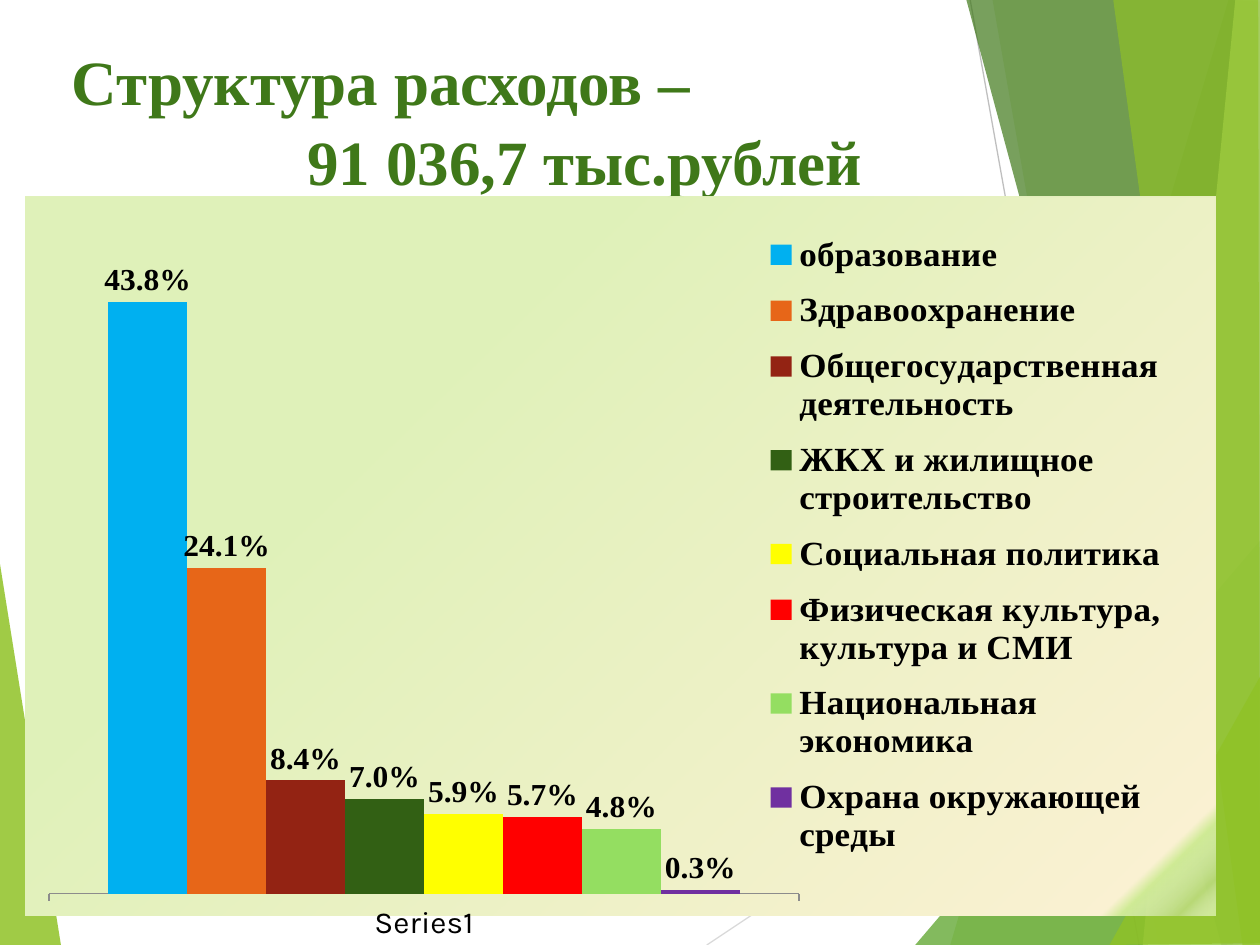
import dataclasses

import pptx
import pptx.chart.data
import pptx.dml.color
import pptx.enum.chart
import pptx.enum.shapes
import pptx.enum.text
import pptx.oxml
import pptx.oxml.ns
import pptx.util

Pt = pptx.util.Pt
TITLE_FONT = "Times New Roman"
AXIS_FONT = "Karla"
COLORS = {
    "lime": "90C226", "green": "54A021", "forest": "3F7819", "pale": "C0E474",
    "light_line": "D9D9D9", "line": "BFBFBF", "axis": "8C8C8C", "text": "000000",
    "education": "00B0F0", "health": "E76618", "state": "932313", "housing": "326014",
    "social": "FFFF00", "culture": "FF0000", "economy": "94DE61", "environment": "7030A0",
    "mint": "DFF1B9", "cream": "FAF1D2", "fold": "D0EB96", "glint": "FFFFFF",
}


@dataclasses.dataclass
class Facet:
    color: str
    opacity: int
    points: list[tuple[float, float]]


@dataclasses.dataclass
class Ray:
    color: str
    start: tuple[float, float]
    end: tuple[float, float]


@dataclasses.dataclass
class Expense:
    name: str
    share: float
    color: str


@dataclasses.dataclass
class GradientStop:
    position: int
    color: str
    opacity: int = 100


BACKDROP = [
    Facet("lime", 85, [(-0.7, 316.1), (35.3, 540.7), (-0.7, 540)]),
    Ray("light_line", (403.9, 540), (720.7, 329)),
    Ray("line", (554.4, 0), (650.9, 540)),
    Facet("lime", 30, [(702, 0), (542.9, 540), (721.4, 540.7), (720.7, 0.7)]),
    Facet("lime", 20, [(567.4, -0.7), (661.7, 540), (720.7, 540), (720.7, -0.7)]),
    Facet("green", 72, [(522.7, 540), (720, 308.9), (720.7, 540)]),
    Facet("forest", 70, [(552.2, -0.7), (698.4, 540), (720.7, 539.3), (720.7, -0.7)]),
    Facet("pale", 70, [(706.3, -0.7), (653, 540), (720.7, 540), (720, -0.7)]),
    Facet("lime", 65, [(635.8, -0.7), (709.9, 540), (720, 540), (718.6, -0.7)]),
    Facet("lime", 80, [(634.3, 540), (720.7, 385.2), (720.7, 539.3)]),
]
EXPENSES = [
    Expense("образование", 0.438, "education"),
    Expense("Здравоохранение", 0.241, "health"),
    Expense("Общегосударственная деятельность", 0.084, "state"),
    Expense("ЖКХ и жилищное строительство", 0.07, "housing"),
    Expense("Социальная политика", 0.059, "social"),
    Expense("Физическая культура, культура и СМИ", 0.057, "culture"),
    Expense("Национальная экономика", 0.048, "economy"),
    Expense("Охрана окружающей среды", 0.003, "environment"),
]
CHART_GRADIENT = [
    GradientStop(31, "mint"), GradientStop(94, "cream"), GradientStop(95, "fold"),
    GradientStop(98, "glint", 33), GradientStop(100, "fold"),
]


def rgb(color: str) -> pptx.dml.color.RGBColor:
    return pptx.dml.color.RGBColor.from_string(COLORS[color])


def format_font(font, name: str, size: float, color: str, bold: bool) -> None:
    font.name = name
    font.size = Pt(size)
    font.bold = bold
    font.color.rgb = rgb(color)


def draw_facet(slide, facet: Facet) -> None:
    builder = slide.shapes.build_freeform(*facet.points[0], scale=Pt(1))
    builder.add_line_segments(facet.points[1:], close=True)
    shape = builder.convert_to_shape()
    shape.shadow.inherit = False
    shape.line.fill.background()
    shape.fill.solid()
    shape.fill.fore_color.rgb = rgb(facet.color)
    fill_color = shape.element.spPr.find(".//" + pptx.oxml.ns.qn("a:srgbClr"))
    alpha = fill_color.makeelement(pptx.oxml.ns.qn("a:alpha"), {"val": str(facet.opacity * 1000)})
    fill_color.append(alpha)


def draw_ray(slide, ray: Ray) -> None:
    connector = slide.shapes.add_connector(
        pptx.enum.shapes.MSO_CONNECTOR.STRAIGHT, *(Pt(value) for value in ray.start + ray.end))
    connector.line.color.rgb = rgb(ray.color)
    connector.line.width = Pt(0.75)
    properties = connector.element.spPr
    properties.append(properties.makeelement(pptx.oxml.ns.qn("a:effectLst"), {}))


def format_title(slide) -> None:
    title = slide.shapes.title
    slide.shapes.element.append(title.element)
    title.left, title.top, title.width, title.height = Pt(13.7), Pt(24.5), Pt(640.8), Pt(88.6)
    frame = title.text_frame
    frame.text = "Структура расходов –\n91 036,7 тыс.рублей"
    frame.word_wrap = True
    frame.auto_size = pptx.enum.text.MSO_AUTO_SIZE.NONE
    frame.vertical_anchor = pptx.enum.text.MSO_ANCHOR.BOTTOM
    frame.margin_left = Pt(27.4)
    frame.margin_right = Pt(27.4)
    frame.margin_top = frame.margin_bottom = Pt(0)
    alignments = (pptx.enum.text.PP_ALIGN.LEFT, pptx.enum.text.PP_ALIGN.CENTER)
    for paragraph, alignment in zip(frame.paragraphs, alignments):
        paragraph.alignment = alignment
        paragraph.line_spacing = 1.05
        paragraph.space_before = Pt(0)
        format_font(paragraph.font, TITLE_FONT, 36, "forest", True)


def set_layout(parent, index: int, values: dict[str, object]) -> None:
    for layout in parent.findall(pptx.oxml.ns.qn("c:layout")):
        parent.remove(layout)
    settings = "".join(f'<c:{key} val="{value}"/>' for key, value in values.items())
    parent.insert(index, pptx.oxml.parse_xml(
        f'<c:layout {pptx.oxml.ns.nsdecls("c")}><c:manualLayout>{settings}</c:manualLayout></c:layout>'))


def fill_chart_area(chart) -> None:
    stops = "".join(
        f'<a:gs pos="{stop.position * 1000}"><a:srgbClr val="{COLORS[stop.color]}">'
        f'<a:alpha val="{stop.opacity * 1000}"/></a:srgbClr></a:gs>' for stop in CHART_GRADIENT)
    chart.element.find(pptx.oxml.ns.qn("c:chart")).addnext(pptx.oxml.parse_xml(
        f'<c:spPr {pptx.oxml.ns.nsdecls("c", "a")}><a:gradFill><a:gsLst>{stops}</a:gsLst>'
        '<a:lin ang="2700000" scaled="0"/></a:gradFill><a:ln><a:noFill/></a:ln></c:spPr>'))


def draw_chart(slide) -> None:
    data = pptx.chart.data.CategoryChartData(number_format="0.0%")
    data.categories = ["Series1"]
    for expense in EXPENSES:
        data.add_series(expense.name, [expense.share])
    chart = slide.shapes.add_chart(
        pptx.enum.chart.XL_CHART_TYPE.COLUMN_CLUSTERED,
        Pt(14.4), Pt(112.3), Pt(680.4), Pt(425.5), data).chart
    chart.has_title = False
    format_font(chart.font, AXIS_FONT, 18, "text", False)
    fill_chart_area(chart)

    plot = chart.plots[0]
    plot.gap_width = 150
    plot.overlap = 0
    plot.vary_by_categories = False
    outside_end = pptx.enum.chart.XL_LABEL_POSITION.OUTSIDE_END
    for series, expense in zip(plot.series, EXPENSES):
        series.format.fill.solid()
        series.format.fill.fore_color.rgb = rgb(expense.color)
        labels = series.data_labels
        labels.show_value = True
        labels.number_format = "0.0%"
        labels.number_format_is_linked = False
        labels.position = outside_end
        format_font(labels.font, TITLE_FONT, 18, "text", True)

    health_series = plot.series[1]
    health_label = health_series.points[0].data_label
    format_font(health_label.font, TITLE_FONT, 18, "text", True)
    health_label.position = outside_end
    label_element = health_series.data_labels.element if hasattr(health_series.data_labels, "element") else None
    if label_element is not None:
        set_layout(label_element.find(pptx.oxml.ns.qn("c:dLbl")), 1, {"x": 0.01, "y": -0.01})

    category_axis = chart.category_axis
    category_axis.major_tick_mark = pptx.enum.chart.XL_TICK_MARK.OUTSIDE
    category_axis.format.line.color.rgb = rgb("axis")
    category_axis.format.line.width = Pt(1)
    format_font(category_axis.tick_labels.font, AXIS_FONT, 18, "text", False)
    value_axis = chart.value_axis
    value_axis.visible = False
    value_axis.has_major_gridlines = False
    value_axis.minimum_scale = 0
    value_axis.maximum_scale = 0.5

    chart.has_legend = True
    chart.legend.position = pptx.enum.chart.XL_LEGEND_POSITION.RIGHT
    chart.legend.include_in_layout = False
    format_font(chart.legend.font, TITLE_FONT, 20, "text", True)
    edges = {"xMode": "edge", "yMode": "edge"}
    plot_area = chart.element.find(".//" + pptx.oxml.ns.qn("c:plotArea"))
    set_layout(plot_area, 0, {"layoutTarget": "inner", **edges, "x": 0.02, "y": 0.03, "w": 0.63, "h": 0.94})
    legend = chart.element.find(".//" + pptx.oxml.ns.qn("c:legend"))
    set_layout(legend, 1, {**edges, "x": 0.61, "y": 0.03, "w": 0.36, "h": 0.91})


def main() -> None:
    presentation = pptx.Presentation()
    presentation.slide_width, presentation.slide_height = Pt(720), Pt(540)
    slide = presentation.slides.add_slide(presentation.slide_layouts[5])
    for part in BACKDROP:
        if isinstance(part, Facet):
            draw_facet(slide, part)
        else:
            draw_ray(slide, part)
    format_title(slide)
    draw_chart(slide)
    presentation.save("out.pptx")


if __name__ == "__main__":
    main()
